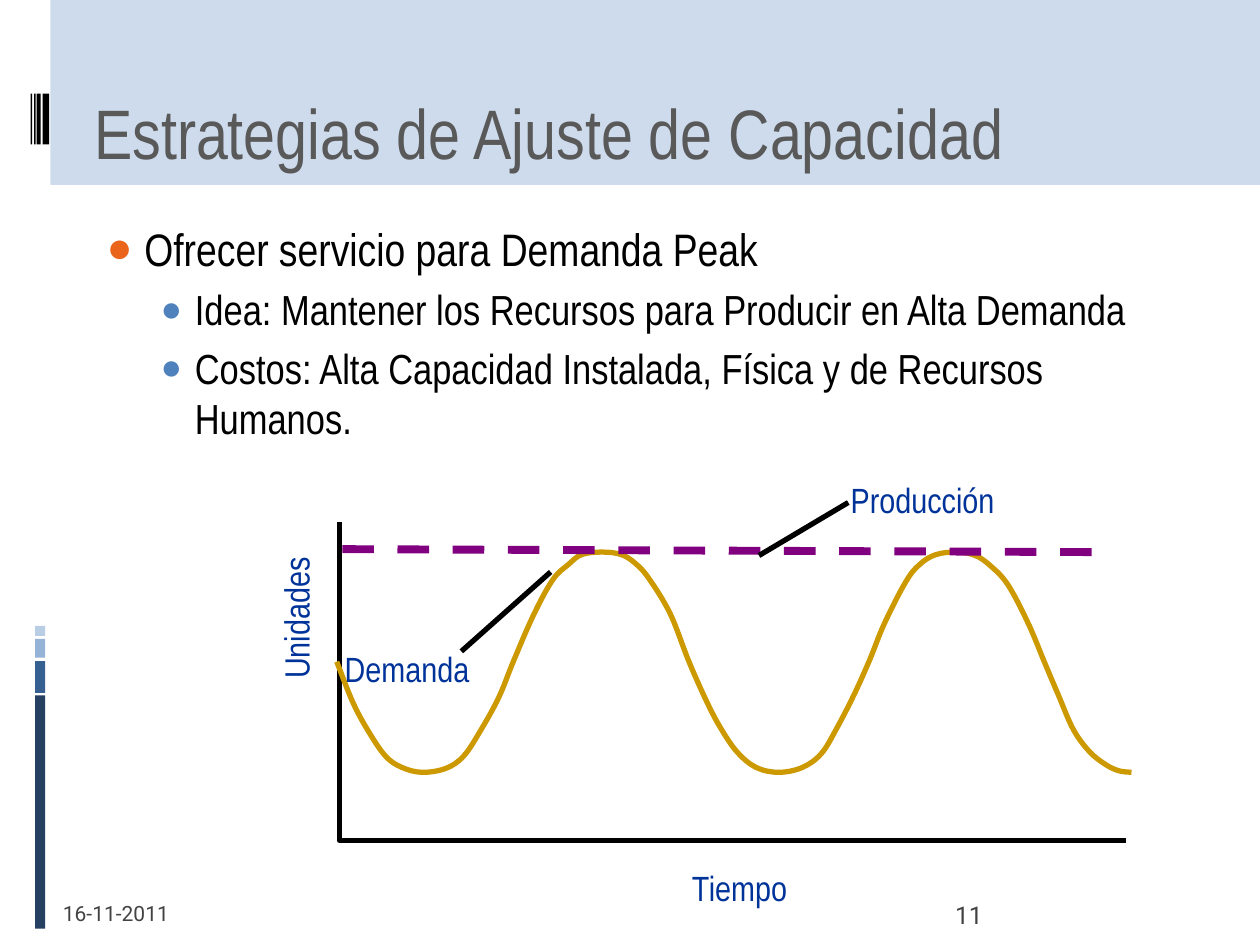
"""Build the slide on meeting peak demand with fixed capacity."""
from lxml.etree import SubElement as Sub
from pptx import Presentation
from pptx.dml.color import RGBColor as Rgb
from pptx.enum.dml import MSO_LINE as Dash
from pptx.enum.shapes import MSO_CONNECTOR as Link, MSO_SHAPE as Kind
from pptx.enum.text import MSO_ANCHOR as Anchor, PP_ALIGN as Align
from pptx.oxml.ns import qn
from pptx.util import Cm, Pt

HUES = {
    "white": "FFFFFF", "black": "000000", "pale": "B9CDE5", "sky": "95B3D7",
    "steel": "376092", "navy": "254061", "title": "595959", "foot": "424242",
    "label": "003399", "wave": "CC9900", "plan": "800080",
    "orange": "EB641B", "blue": "4F81BD",
}

deck = Presentation()
deck.slide_width, deck.slide_height = Cm(25.4), Cm(19.05)
slide = deck.slides.add_slide(deck.slide_layouts[6])
shapes = slide.shapes


def write(lines, box, size, hue, font="Arial Narrow", pad=(0.25, 0.13, 0.25, 0.13)):
    item = shapes.add_textbox(*[Cm(n) for n in box])
    frame = item.text_frame
    frame.word_wrap = True
    frame.margin_left, frame.margin_top, frame.margin_right, frame.margin_bottom = [
        Cm(n) for n in pad]
    frame.text = "\n".join(lines)
    for para in frame.paragraphs:
        for run in para.runs:
            run.font.size, run.font.name = Pt(size), font
            run.font.color.rgb = Rgb.from_string(HUES[hue])
    return item


def stroke(item, hue, width):
    item.line.color.rgb = Rgb.from_string(HUES[hue])
    item.line.width = Pt(width)
    Sub(item._element.spPr, qn("a:effectLst"))


bars = [
    (0, 0, 25.4, 3.73, "pale"), (0, 0, 1.02, 19.05, "white"),
    (0.71, 14.02, 0.2, 4.7, "navy"), (0.71, 13.33, 0.2, 0.64, "steel"),
    (0.71, 12.88, 0.2, 0.38, "sky"), (0.71, 12.62, 0.2, 0.2, "pale"),
    (0.86, 1.89, 0.13, 1.02, "black"), (0.74, 1.89, 0.08, 1.02, "black"),
    (0.69, 1.89, 0.03, 1.02, "black"), (0.62, 1.89, 0.03, 1.02, "black"),
]
for *box, hue in bars:
    bar = shapes.add_shape(Kind.RECTANGLE, *[Cm(n) for n in box])
    bar.shadow.inherit = False
    bar.fill.solid()
    bar.fill.fore_color.rgb = Rgb.from_string(HUES[hue])
    bar.line.fill.background()
band = shapes[0]._element.spPr.find(qn("a:solidFill"))
Sub(band[0], qn("a:alpha"), val="70000")

title = write(["Estrategias de Ajuste de Capacidad"], (1.9, 0.32, 22.4, 3.18),
              40, "title", pad=(0, 0.13, 0, 0))
title.text_frame.vertical_anchor = Anchor.BOTTOM

body = write([
    "Ofrecer servicio para Demanda Peak",
    "Idea: Mantener los Recursos para Producir en Alta Demanda",
    "Costos: Alta Capacidad Instalada, Física y de Recursos Humanos.",
], (1.9, 4.32, 22.4, 13.23), 24, "black")
top, sub = (0, 26, 0.76, 0.76, "orange", 95), (1, 24, 1.78, 0.69, "blue", 85)
for para, style in zip(body.text_frame.paragraphs, (top, sub, sub)):
    level, size, left, hang, hue, ratio = style
    para.level = level
    para.space_before = Pt(size * 0.2)
    para.runs[0].font.size = Pt(size)
    props = para._p.get_or_add_pPr()
    props.set("marL", str(Cm(left)))
    props.set("indent", str(-Cm(hang)))
    Sub(Sub(props, qn("a:buClr")), qn("a:srgbClr"), val=HUES[hue])
    Sub(props, qn("a:buSzPct"), val=str(ratio * 1000))
    Sub(props, qn("a:buFont"), typeface="Arial")
    Sub(props, qn("a:buChar"), char="●")

date = write(["16-11-2011"], (1.27, 17.65, 2.82, 1.02), 12, "foot", "Roboto", [0] * 4)
page = write(["11"], (17.7, 17.72, 2.11, 1.02), 14, "foot", "Roboto", [0] * 4)
page.text_frame.paragraphs[0].alignment = Align.RIGHT
for item in (date, page):
    item.text_frame.vertical_anchor = Anchor.BOTTOM

axes = [(6.84, 10.52), (6.84, 16.94), (22.7, 16.94)]
knots = [
    (6.79, 13.34), (7.11, 14.15), (7.42, 14.73), (7.77, 15.24), (8.1, 15.47),
    (8.51, 15.57), (8.99, 15.49), (9.35, 15.24), (9.7, 14.71), (10.06, 14.05),
    (10.36, 13.31), (10.77, 12.37), (11.15, 11.68), (11.46, 11.38), (11.73, 11.18),
    (12.14, 11.13), (12.52, 11.18), (12.8, 11.35), (13.08, 11.66), (13.51, 12.37),
    (13.89, 13.34), (14.25, 14.15), (14.53, 14.68), (14.86, 15.16), (15.24, 15.47),
    (15.7, 15.57), (16.18, 15.47), (16.56, 15.19), (16.87, 14.68), (17.22, 14),
    (17.53, 13.31), (17.83, 12.57), (18.26, 11.73), (18.54, 11.38), (18.87, 11.18),
    (19.3, 11.13), (19.66, 11.2), (19.96, 11.4), (20.32, 11.79), (20.73, 12.57),
    (21.06, 13.36), (21.34, 14.02), (21.64, 14.71), (21.97, 15.16), (22.3, 15.42),
    (22.56, 15.54), (22.81, 15.57),
]
for dots, hue in ((axes, "black"), (knots, "wave")):
    first, *rest = [(Cm(x), Cm(y)) for x, y in dots]
    pen = shapes.build_freeform(*first)
    pen.add_line_segments(rest, close=False)
    curve = pen.convert_to_shape()
    curve.fill.background()
    stroke(curve, hue, 3)

route = next(curve._element.iter(qn("a:path")))
spots = [(int(p.get("x")), int(p.get("y"))) for p in route.iter(qn("a:pt"))]
for line in route.findall(qn("a:lnTo")):
    route.remove(line)
ends = [spots[0], *spots, spots[-1]]
for a, b, c, d in zip(ends, ends[1:], ends[2:], ends[3:]):
    bend = Sub(route, qn("a:cubicBezTo"))
    start = [n + (q - p) / 6 for p, n, q in zip(a, b, c)]
    stop = [n - (q - p) / 6 for p, n, q in zip(b, c, d)]
    for x, y in (start, stop, c):
        Sub(bend, qn("a:pt"), x=str(round(x)), y=str(round(y)))

labels = [
    ("Demanda", 6.7, 12.93, 4.6, 0), ("Unidades", 4.35, 11.79, 3.2, 270),
    ("Tiempo", 13.7, 17.34, 2.77, 0), ("Producción", 16.9, 9.52, 4.42, 0),
]
for text, left, high, wide, turn in labels:
    label = write([text], (left, high, wide, 1.09), 20, "label")
    label.rotation = turn

links = [
    (11.1, 11.53, 9.3, 13.13, "black", 3), (6.9, 11.07, 22.15, 11.13, "plan", 4.5),
    (17.1, 10.13, 15.3, 11.2, "black", 3),
]
for *span, hue, width in links:
    link = shapes.add_connector(Link.STRAIGHT, *[Cm(n) for n in span])
    stroke(link, hue, width)
    if hue == "plan":
        link.line.dash_style = Dash.DASH

deck.save("out.pptx")
